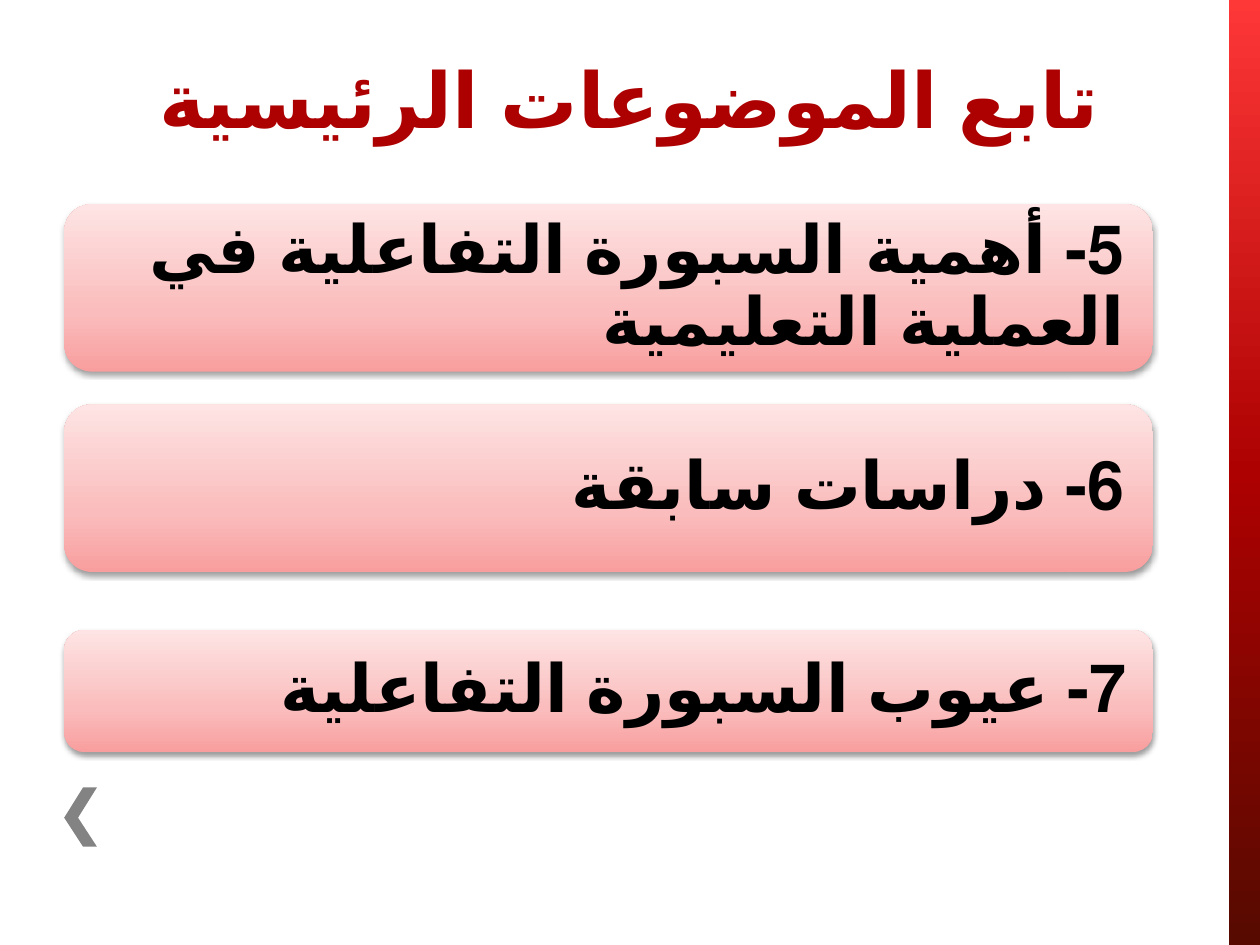
"""Build the slide that lists main topics five to seven in Arabic."""
from dataclasses import dataclass

from lxml.etree import SubElement
from pptx import Presentation
from pptx.dml.color import RGBColor
from pptx.enum.lang import MSO_LANGUAGE_ID
from pptx.enum.shapes import MSO_SHAPE
from pptx.enum.text import MSO_ANCHOR, PP_ALIGN
from pptx.oxml.ns import qn
from pptx.util import Inches, Pt


@dataclass(frozen=True)
class Theme:
    font: str = "Calibri"
    title_size: int = 44
    topic_size: int = 38
    title: str = "AD0101"
    topic: str = "000000"
    chevron: str = "838383"
    shadow: str = "000000"
    band: tuple = ((0, "FE3737"), (50, "AD0101"), (100, "560A00"))
    card: tuple = ((0, "F99E9E"), (35, "FABCBC"), (100, "FEE4E4"))


THEME = Theme()


def paint_gradient(shape, stops, angle):
    shape.shadow.inherit = False
    shape.line.fill.background()
    shape.fill.gradient()
    shape.fill.gradient_angle = angle
    stop_list = shape._element.spPr.find(".//" + qn("a:gsLst"))
    stop_list.clear()
    for position, color in stops:
        stop = SubElement(stop_list, qn("a:gs"), pos=str(position * 1000))
        SubElement(stop, qn("a:srgbClr"), val=color)


def write_arabic(frame, text, size, color, align):
    frame.word_wrap = True
    paragraph = frame.paragraphs[0]
    paragraph.text = text
    paragraph.alignment = align
    paragraph._p.get_or_add_pPr().set("rtl", "1")
    paragraph.font.name = THEME.font
    paragraph.font.size = Pt(size)
    paragraph.font.bold = True
    paragraph.font.color.rgb = RGBColor.from_string(color)
    paragraph.runs[0].font.language_id = MSO_LANGUAGE_ID.ARABIC_EGYPT
    return paragraph


prs = Presentation()
prs.slide_width, prs.slide_height = Inches(10), Inches(7.5)
slide = prs.slides.add_slide(prs.slide_layouts[5])
shapes = slide.shapes

band = shapes.add_shape(
    MSO_SHAPE.RECTANGLE, Inches(9.75), Inches(0), Inches(0.25), prs.slide_height
)
paint_gradient(band, THEME.band, 270)

chevron_points = [(0.77, 6.25), (0.62, 6.49), (0.77, 6.72), (0.66, 6.72), (0.51, 6.49)]
outline = shapes.build_freeform(Inches(0.66), Inches(6.25))
outline.add_line_segments([(Inches(x), Inches(y)) for x, y in chevron_points])
chevron = outline.convert_to_shape()
chevron.shadow.inherit = False
chevron.line.fill.background()
chevron.fill.solid()
chevron.fill.fore_color.rgb = RGBColor.from_string(THEME.chevron)

title = shapes.title
title.left, title.top = Inches(0.91), Inches(0.36)
title.width, title.height = Inches(8.17), Inches(1.02)
title.text_frame.vertical_anchor = MSO_ANCHOR.TOP
write_arabic(
    title.text_frame, "تابع الموضوعات الرئيسية",
    THEME.title_size, THEME.title, PP_ALIGN.CENTER,
)

topics = [
    ("5- أهمية السبورة التفاعلية في العملية التعليمية", 1.62, 1.33),
    ("6- دراسات سابقة", 3.21, 1.33),
    ("7- عيوب السبورة التفاعلية", 5, 0.97),
]
for topic, top, height in topics:
    card = shapes.add_shape(
        MSO_SHAPE.ROUNDED_RECTANGLE,
        Inches(0.51), Inches(top), Inches(8.64), Inches(height),
    )
    paint_gradient(card, THEME.card, 90)
    shadow = SubElement(
        card._element.spPr.find(qn("a:effectLst")), qn("a:outerShdw"),
        blurRad=str(Pt(3.1)), dist=str(Pt(1.6)), dir="5400000", rotWithShape="0",
    )
    shadow_color = SubElement(shadow, qn("a:srgbClr"), val=THEME.shadow)
    SubElement(shadow_color, qn("a:alpha"), val="38000")

    frame = card.text_frame
    frame.vertical_anchor = MSO_ANCHOR.MIDDLE
    frame.margin_left = frame.margin_right = Inches(0.16)
    frame.margin_top = frame.margin_bottom = Inches(0.16)
    paragraph = write_arabic(
        frame, topic, THEME.topic_size, THEME.topic, PP_ALIGN.RIGHT
    )
    paragraph.line_spacing = 0.9

prs.save("out.pptx")
